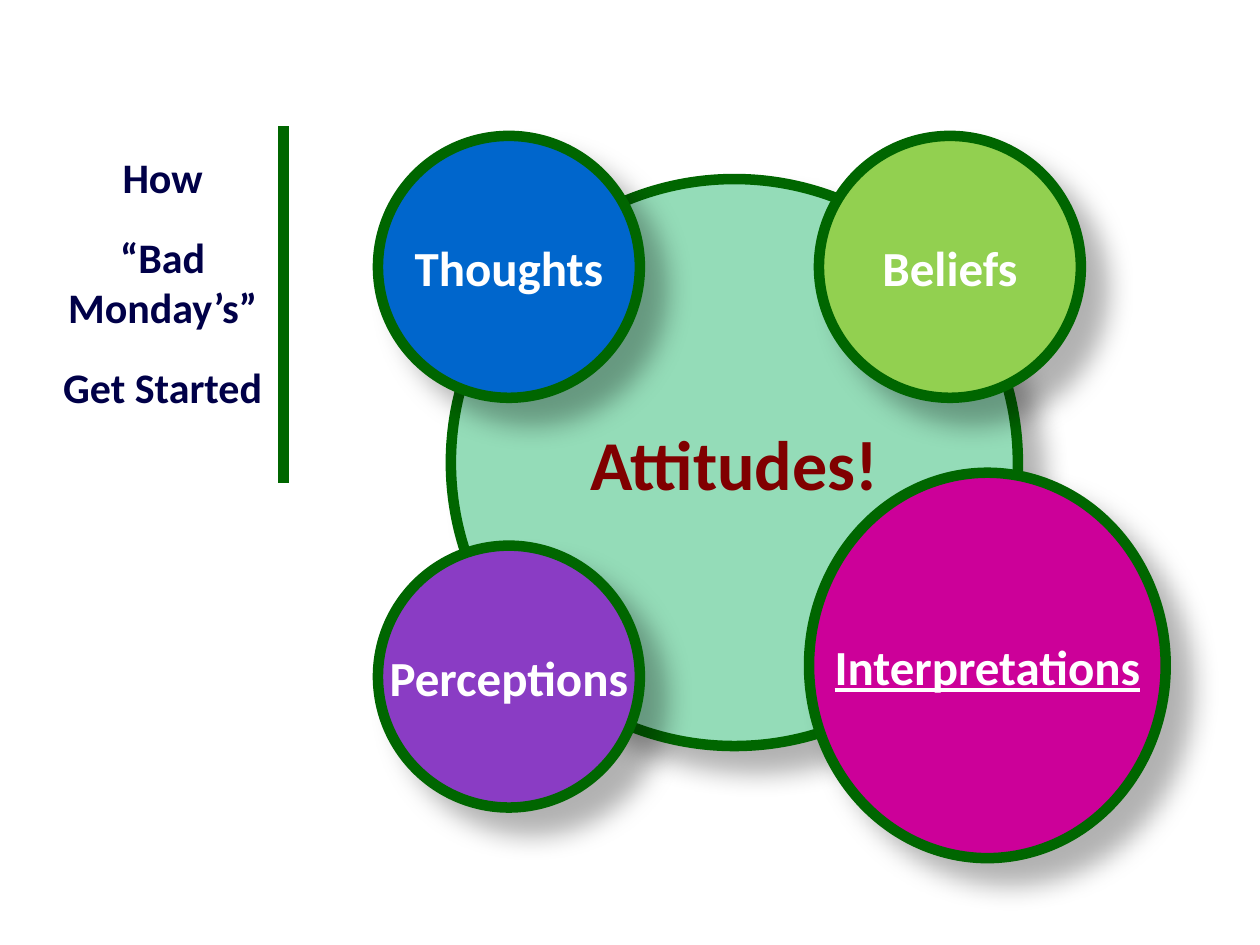
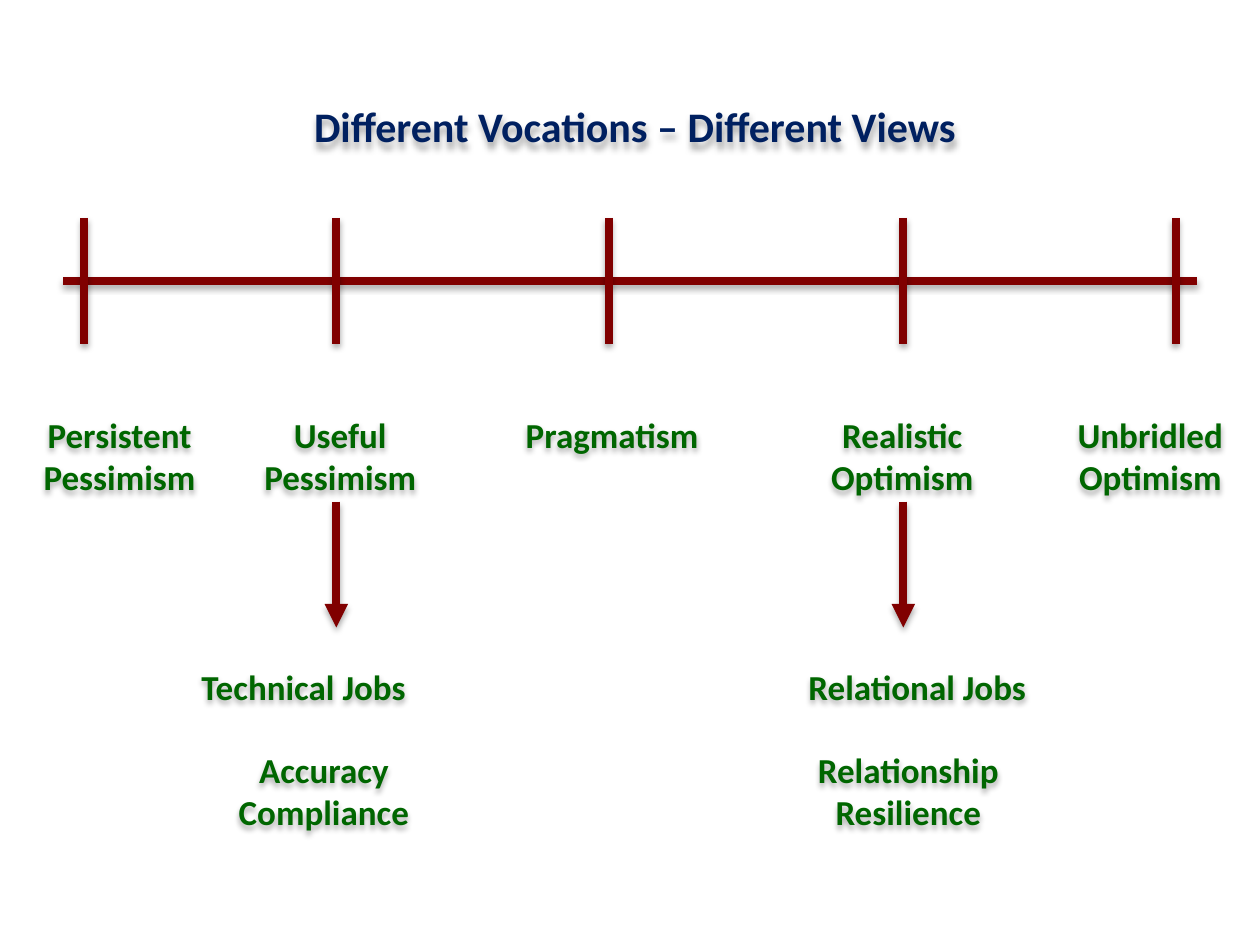
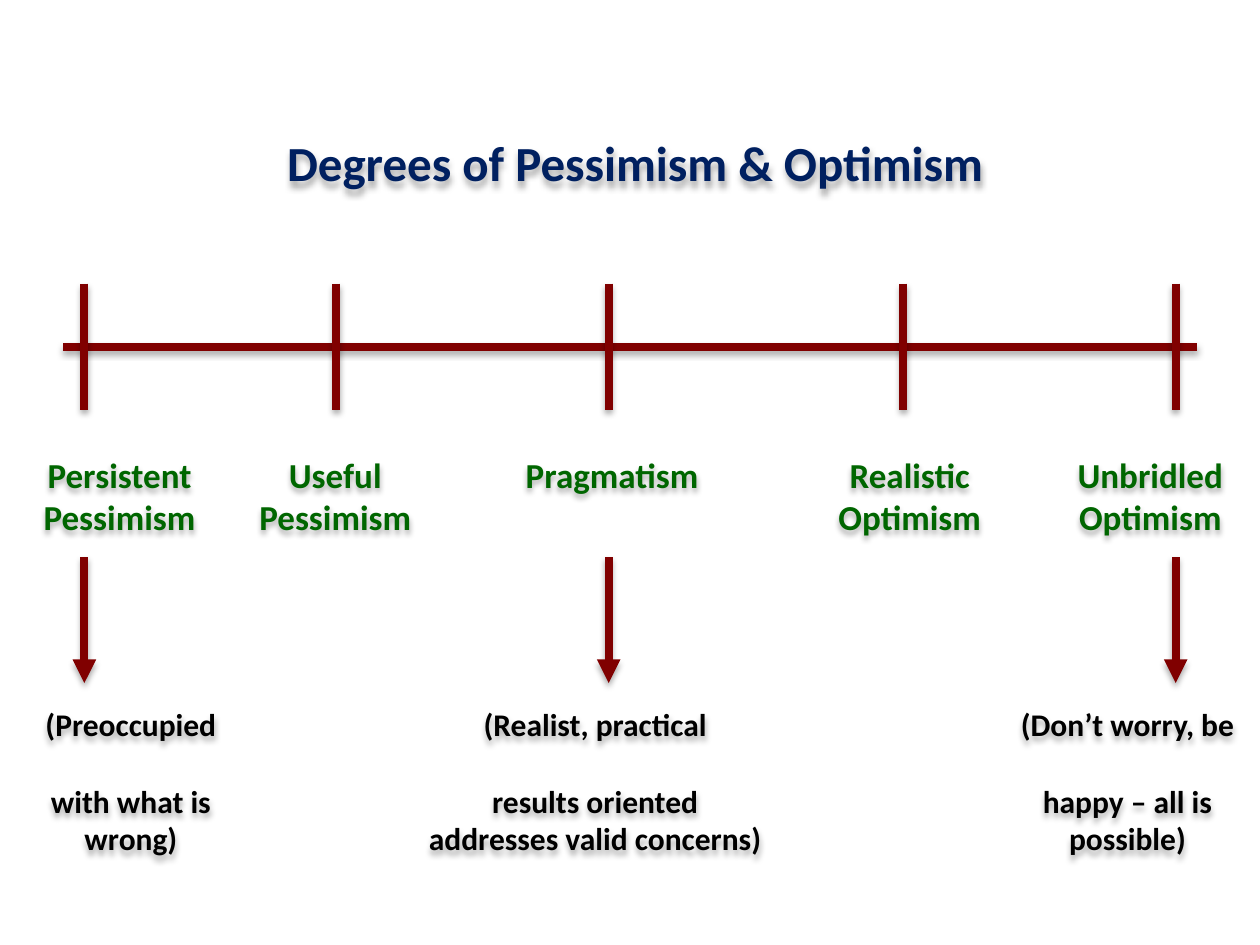
import pptx
import pptx.dml.color
import pptx.enum.shapes
import pptx.enum.text
import pptx.oxml.ns
import pptx.util
from lxml import etree

Cm = pptx.util.Cm
Pt = pptx.util.Pt
RGBColor = pptx.dml.color.RGBColor
qn = pptx.oxml.ns.qn
ALIGN = pptx.enum.text.PP_ALIGN
ANCHOR = pptx.enum.text.MSO_ANCHOR

FONT = "Calibri"
BLACK = RGBColor(0x00, 0x00, 0x00)
WHITE = RGBColor(0xFF, 0xFF, 0xFF)
GREEN = RGBColor(0x00, 0x66, 0x00)
MAROON = RGBColor(0x80, 0x00, 0x00)
NAVY = RGBColor(0x00, 0x20, 0x60)
DARK_NAVY = RGBColor(0x00, 0x00, 0x48)
MINT = RGBColor(0x94, 0xDC, 0xB8)
BLUE = RGBColor(0x00, 0x66, 0xCC)
PURPLE = RGBColor(0x8A, 0x3C, 0xC4)
LIME = RGBColor(0x92, 0xD0, 0x50)
MAGENTA = RGBColor(0xCC, 0x00, 0x99)

# Opacity in percent, blur and distance in points, direction in degrees
DEEP_SHADOW = (30, 15, 18, 45)
SOFT_SHADOW = (32, 3.5, 2.2, 90)

# Scale positions in centimetres
SCALE_START, SCALE_END = 1.27, 24.13
TICKS = (1.7, 6.78, 12.27, 18.21, 23.7)
HALF_TICK = 1.27
ARROW_LENGTH = 2.54
DEGREES = (
    "Persistent\nPessimism",
    "Useful\nPessimism",
    "Pragmatism",
    "Realistic\nOptimism",
    "Unbridled\nOptimism",
)


def set_shadow(shape, shadow=None):
    """Give the shape an outer shadow, or none at all."""
    effects = etree.SubElement(shape._element.spPr, qn("a:effectLst"))
    if shadow is None:
        return
    opacity, blur, distance, direction = shadow
    outer = etree.SubElement(
        effects, qn("a:outerShdw"), blurRad=str(Pt(blur)), dist=str(Pt(distance)),
        dir=str(direction * 60000), algn="ctr", rotWithShape="0")
    color = etree.SubElement(outer, qn("a:srgbClr"), val=str(BLACK))
    etree.SubElement(color, qn("a:alpha"), val=str(opacity * 1000))


def write_text(shape, text, *, size, color, underline=None, gaps=(),
               anchor=ANCHOR.TOP, wrap=True):
    """Write one centred paragraph per line; gaps are points after each line."""
    frame = shape.text_frame
    frame.word_wrap = wrap
    frame.vertical_anchor = anchor
    frame.margin_left = frame.margin_right = 0
    frame.margin_top = frame.margin_bottom = 0
    frame.text = text
    for paragraph in frame.paragraphs:
        paragraph.alignment = ALIGN.CENTER
        font = paragraph.runs[0].font
        font.name = FONT
        font.size = Pt(size)
        font.bold = True
        font.underline = underline
        font.color.rgb = color
    for paragraph, gap in zip(frame.paragraphs, gaps):
        paragraph.space_after = Pt(gap)


def add_label(slide, text, center, top, width, height=1.8,
              shadow=SOFT_SHADOW, **text_format):
    shape = slide.shapes.add_textbox(
        Cm(center - width / 2), Cm(top), Cm(width), Cm(height))
    set_shadow(shape, shadow)
    write_text(shape, text, **text_format)


def add_circle(slide, text, left, top, width, height, fill, *,
               size=28, color=WHITE, underline=None):
    shape = slide.shapes.add_shape(
        pptx.enum.shapes.MSO_SHAPE.OVAL, Cm(left), Cm(top), Cm(width), Cm(height))
    shape.fill.solid()
    shape.fill.fore_color.rgb = fill
    shape.line.color.rgb = GREEN
    shape.line.width = Pt(6)
    set_shadow(shape, DEEP_SHADOW)
    write_text(shape, text, size=size, color=color, underline=underline,
               anchor=ANCHOR.MIDDLE, wrap=False)


def add_line(slide, start, end, *, color=MAROON, width=4.5,
             shadow=SOFT_SHADOW, arrow=False):
    connector = slide.shapes.add_connector(
        pptx.enum.shapes.MSO_CONNECTOR.STRAIGHT,
        *(Cm(value) for value in start + end))
    connector.line.color.rgb = color
    connector.line.width = Pt(width)
    if arrow:
        etree.SubElement(connector.line._get_or_add_ln(), qn("a:tailEnd"),
                         type="triangle")
    set_shadow(connector, shadow)


def add_scale(slide, axis, label_top, label_centers, arrow_top, arrow_ticks):
    """Draw the five-degree scale, its labels and the arrows below some of them."""
    add_line(slide, (SCALE_START, axis), (SCALE_END, axis))
    for tick, text, center in zip(TICKS, DEGREES, label_centers):
        add_line(slide, (tick, axis - HALF_TICK), (tick, axis + HALF_TICK))
        add_label(slide, text, center, label_top, 4.2, size=20, color=GREEN)
    for index in arrow_ticks:
        tick = TICKS[index]
        add_line(slide, (tick, arrow_top), (tick, arrow_top + ARROW_LENGTH),
                 arrow=True)


def add_title(slide, text, top, size):
    add_label(slide, text, 12.8, top, 24.3, height=1.2, size=size, color=NAVY)


def build_attitudes(slide):
    small = 5.28
    add_circle(slide, "Attitudes!", 9.09, 3.61, 11.43, 11.43, MINT,
               size=40, color=MAROON)
    add_circle(slide, "Thoughts", 7.62, 2.74, small, small, BLUE)
    add_circle(slide, "Perceptions", 7.62, 11, small, small, PURPLE)
    add_circle(slide, "Beliefs", 16.51, 2.74, small, small, LIME)
    add_circle(slide, "Interpretations", 16.31, 9.53, 7.19, 7.77, MAGENTA,
               underline=True)
    add_label(slide, "How\n“Bad Monday’s”\nGet Started", 3.28, 3.05, 4.37,
              height=5.3, shadow=None, size=24, color=DARK_NAVY, gaps=(17, 17))
    add_line(slide, (5.72, 2.54), (5.72, 9.73), color=GREEN, width=6, shadow=None)


def build_vocations(slide):
    add_title(slide, "Different Vocations – Different Views", 2.03, 24)
    add_scale(slide, 5.66, 8.33, (2.41, 6.86, 12.34, 18.19, 23.19),
              10.11, (1, 3))
    for text, center, top in (
        ("Technical Jobs", 6.12, 13.41),
        ("Accuracy\nCompliance", 6.53, 15.09),
        ("Relational Jobs", 18.49, 13.41),
        ("Relationship\nResilience", 18.31, 15.09),
    ):
        add_label(slide, text, center, top, 5, size=20, color=GREEN)


def build_degrees(slide):
    add_title(slide, "Degrees of Pessimism & Optimism", 2.67, 28)
    add_scale(slide, 6.99, 9.14, (2.41, 6.76, 12.34, 18.34, 23.19),
              11.23, (0, 2, 4))
    for text, center, width in (
        ("(Preoccupied\nwith what is\nwrong)", 2.64, 4.8),
        ("(Realist, practical\nresults oriented\naddresses valid concerns)", 12, 7.5),
        ("(Don’t worry, be\nhappy – all is\npossible)", 22.73, 4.8),
    ):
        add_label(slide, text, center, 14.22, width, height=3.1,
                  size=18, color=BLACK, gaps=(22,))


def main():
    presentation = pptx.Presentation()
    presentation.slide_width = Cm(25.4)
    presentation.slide_height = Cm(19.05)
    blank = presentation.slide_layouts[6]
    for build in (build_attitudes, build_vocations, build_degrees):
        build(presentation.slides.add_slide(blank))
    presentation.save("out.pptx")


if __name__ == "__main__":
    main()
